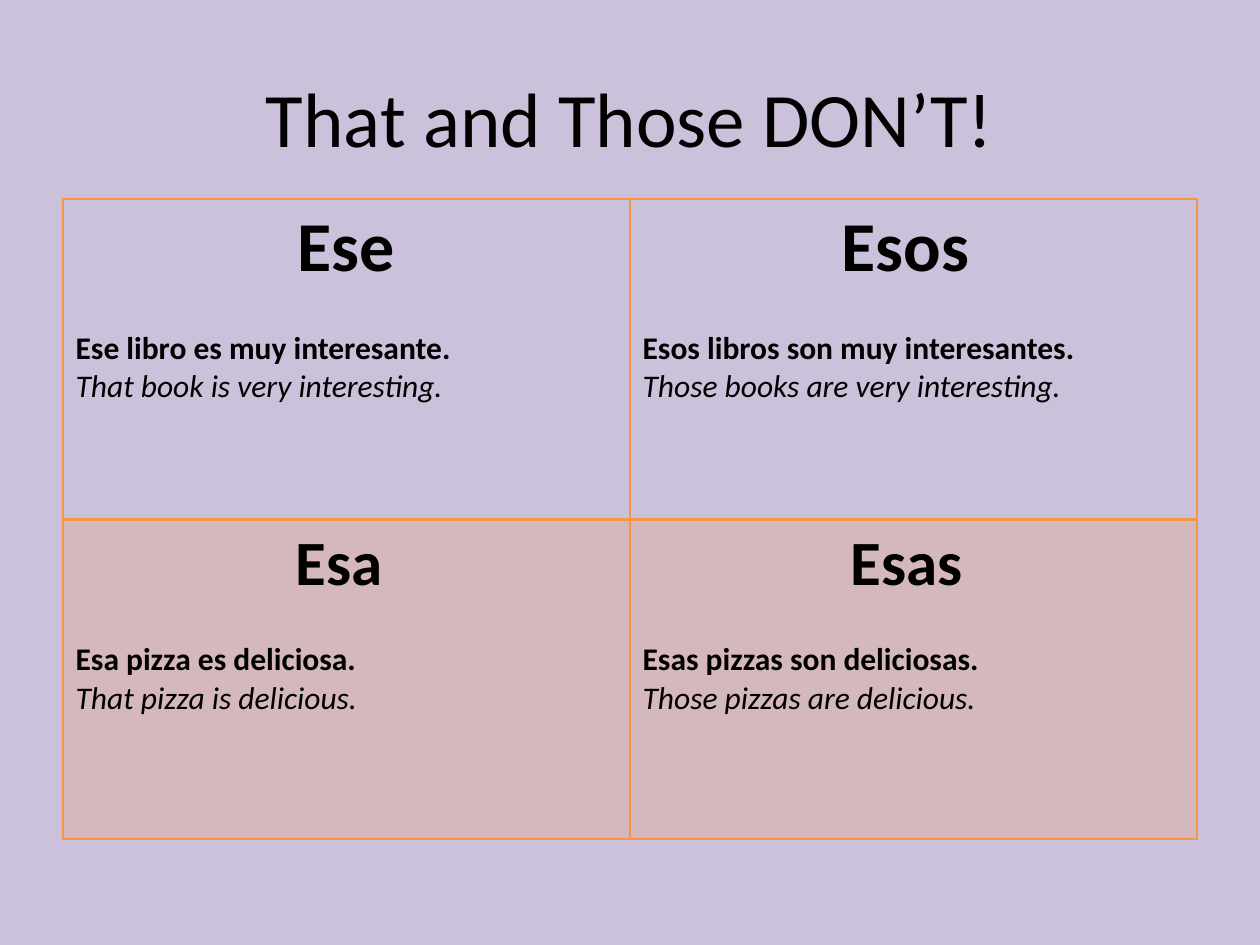
from lxml import etree
from pptx import Presentation
from pptx.dml.color import RGBColor
from pptx.enum.text import MSO_ANCHOR, PP_ALIGN
from pptx.oxml.ns import qn
from pptx.util import Inches, Pt

CENTER, LEFT = PP_ALIGN.CENTER, PP_ALIGN.LEFT
MIDDLE = MSO_ANCHOR.MIDDLE
LAVENDER, ORANGE, BLACK = "CCC1DA", "F79646", "000000"


def rgb(value):
    return RGBColor.from_string(value)


def style(paragraph, size, align=LEFT, bold=False, italic=False):
    paragraph.alignment = align
    font = paragraph.font
    font.name, font.size, font.bold, font.italic = "Calibri", Pt(size), bold, italic
    font.color.rgb = rgb(BLACK)


prs = Presentation()
prs.slide_width, prs.slide_height = Inches(10), Inches(7.5)
slide = prs.slides.add_slide(prs.slide_layouts[6])
slide.background.fill.solid()
slide.background.fill.fore_color.rgb = rgb(LAVENDER)

# Title
title = slide.shapes.add_textbox(Inches(0.5), Inches(0.3), Inches(9), Inches(1.25)).text_frame
title.word_wrap = True
title.vertical_anchor = MIDDLE
title.text = "That and Those DON’T!"
style(title.paragraphs[0], 44, CENTER)

# Demonstratives: masculine row, then feminine row; singular, then plural
demonstratives = [
    [("Ese", "Ese libro es muy interesante.", "That book is very interesting."),
     ("Esos ", "Esos libros son muy interesantes.", "Those books are very interesting.")],
    [("Esa ", "Esa pizza es deliciosa.", "That pizza is delicious."),
     ("Esas ", "Esas pizzas son deliciosas.", "Those pizzas are delicious.")],
]
heading_sizes = [40, 36]

grid = slide.shapes.add_table(2, 2, Inches(0.5), Inches(1.58), Inches(9), Inches(5.08)).table
grid.first_row = grid.horz_banding = False

for r, row in enumerate(demonstratives):
    for c, (word, spanish, english) in enumerate(row):
        cell = grid.cell(r, c)
        cell.text = "\n".join((word, spanish, english))
        heading, example, translation = cell.text_frame.paragraphs
        style(heading, heading_sizes[r], CENTER, bold=True)
        heading.space_after = Pt(22)
        style(example, 18, bold=True)
        style(translation, 18, italic=True)

        # Feminine row has a light orange tint
        tc_pr = cell._tc.get_or_add_tcPr()
        if r == 1:
            cell.fill.solid()
            cell.fill.fore_color.rgb = rgb(ORANGE)
            color = tc_pr.find(qn("a:solidFill"))[0]
            etree.SubElement(color, qn("a:alpha"), val="20000")
        else:
            cell.fill.background()

        # Borders come before the fill; the line between the rows is heavier
        divider = "B" if r == 0 else "T"
        for i, side in enumerate("LRTB"):
            width = Pt(2 if side == divider else 1)
            line = etree.Element(qn("a:ln" + side), w=str(width))
            line_fill = etree.SubElement(line, qn("a:solidFill"))
            etree.SubElement(line_fill, qn("a:srgbClr"), val=ORANGE)
            tc_pr.insert(i, line)

prs.save("out.pptx")
